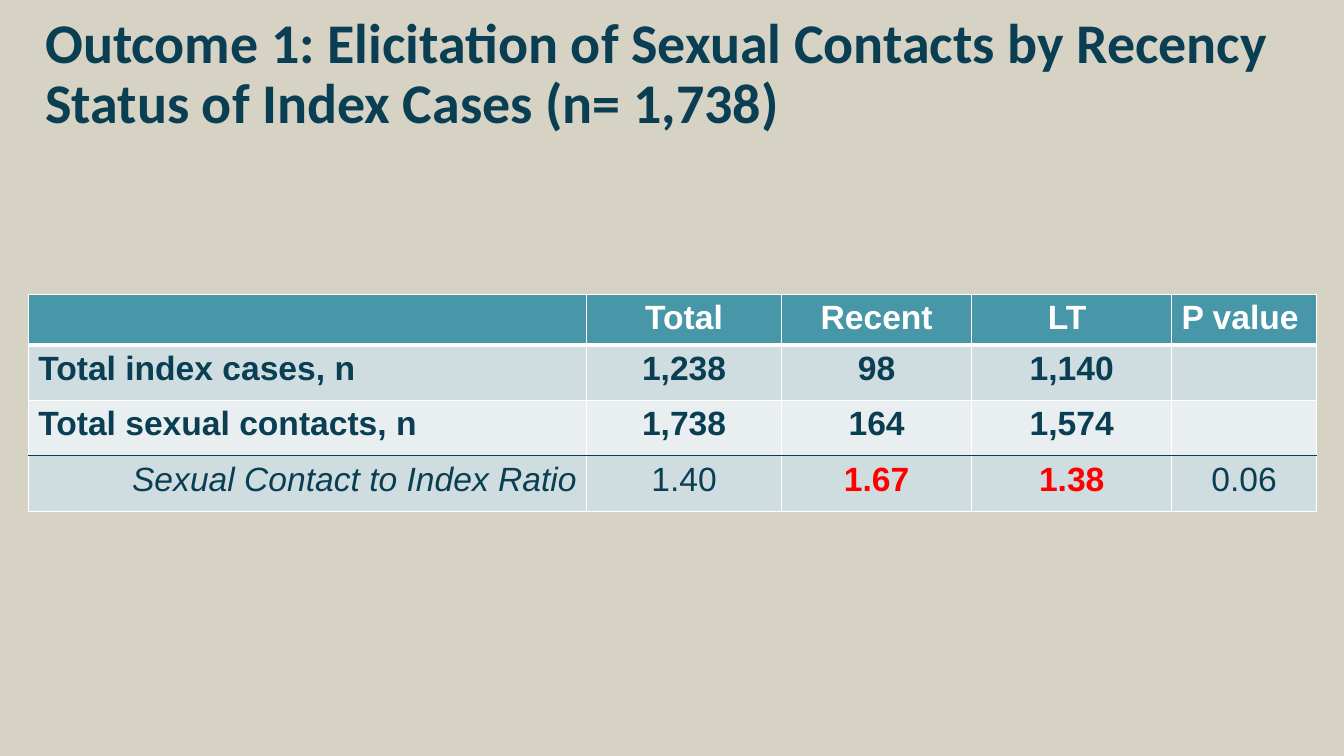
import dataclasses
import lxml.etree
import pptx
import pptx.dml.color
import pptx.enum.text
import pptx.oxml.ns
import pptx.util

Inches = pptx.util.Inches
Align = pptx.enum.text.PP_ALIGN


@dataclasses.dataclass(frozen=True)
class Theme:
    """Colours, fonts and type sizes of the slide."""
    back: str = "D6D2C4"
    ink: str = "0A3E53"
    white: str = "FFFFFF"
    red: str = "FF0000"
    teal: str = "4797A8"
    band: str = "CFDDE1"
    pale: str = "E9EFF1"
    head: dict = dataclasses.field(default_factory=lambda: {
        "name": "Calibri", "size": pptx.util.Pt(40), "bold": True})
    body: dict = dataclasses.field(default_factory=lambda: {
        "name": "Arial", "size": pptx.util.Pt(24), "bold": True})


THEME = Theme()
WIDTHS = [5.54, 1.93, 1.89, 1.98, 1.44]
HEIGHTS = [0.39, 0.55, 0.55, 0.55]
FILLS = [THEME.teal, THEME.band, THEME.pale, THEME.band]
EDGES = [(THEME.white, 1), (THEME.white, 3), (THEME.white, 1),
         (THEME.ink, 1), (THEME.white, 1)]
ROWS = [
    ["", "Total", "Recent", "LT ", "P value"],
    ["Total index cases, n", "1,238", "98", "1,140", ""],
    ["Total sexual contacts, n", "1,738", "164", "1,574", ""],
    ["Sexual Contact to Index Ratio", "1.40", "1.67", "1.38", "0.06"],
]
LAST = len(ROWS) - 1
ALIGNS = {(0, 4): Align.LEFT, (1, 0): Align.LEFT,
          (2, 0): Align.LEFT, (LAST, 0): Align.RIGHT}
LOOKS = {(LAST, 0): {"bold": False, "italic": True},
         (LAST, 1): {"bold": False}, (LAST, 4): {"bold": False}}
REDS = {(LAST, 2), (LAST, 3)}


def rgb(code):
    """Turn a hex code into a colour."""
    return pptx.dml.color.RGBColor.from_string(code)


def style(font, look, color):
    """Apply a dict of format values and a colour to a font."""
    for key, value in look.items():
        setattr(font, key, value)
    font.color.rgb = rgb(color)


def edge(cell, row):
    """Draw the four borders of a cell in the given row."""
    sides = {"L": (THEME.white, 1), "R": (THEME.white, 1),
             "T": EDGES[row], "B": EDGES[row + 1]}
    props = cell._tc.get_or_add_tcPr()
    qn = pptx.oxml.ns.qn
    for spot, (side, (color, width)) in enumerate(sides.items()):
        line = lxml.etree.Element(qn(f"a:ln{side}"), w=str(pptx.util.Pt(width)))
        fill = lxml.etree.SubElement(line, qn("a:solidFill"))
        lxml.etree.SubElement(fill, qn("a:srgbClr"), val=color)
        props.insert(spot, line)


def title(slide, box, text):
    """Place the slide title in its box."""
    frame = slide.shapes.add_textbox(*map(Inches, box)).text_frame
    frame.word_wrap = True
    frame.vertical_anchor = pptx.enum.text.MSO_ANCHOR.MIDDLE
    para = frame.paragraphs[0]
    para.line_spacing = 0.9
    run = para.add_run()
    run.text = text
    style(run.font, THEME.head, THEME.ink)


def grid(slide, box):
    """Place the table of contacts by recency in its box."""
    table = slide.shapes.add_table(
        len(ROWS), len(WIDTHS), *map(Inches, box)).table
    for column, width in zip(table.columns, WIDTHS):
        column.width = Inches(width)
    for row, texts in enumerate(ROWS):
        table.rows[row].height = Inches(HEIGHTS[row])
        for col, text in enumerate(texts):
            spot = row, col
            cell = table.cell(row, col)
            cell.fill.solid()
            cell.fill.fore_color.rgb = rgb(FILLS[row])
            edge(cell, row)
            if not text:
                continue
            para = cell.text_frame.paragraphs[0]
            para.alignment = ALIGNS.get(spot, Align.CENTER)
            run = para.add_run()
            run.text = text
            plain = THEME.ink if row else THEME.white
            style(run.font, THEME.body | LOOKS.get(spot, {}),
                  THEME.red if spot in REDS else plain)


def main():
    """Build and save the slide."""
    deck = pptx.Presentation()
    deck.slide_width, deck.slide_height = Inches(13.33), Inches(7.5)
    slide = deck.slides.add_slide(deck.slide_layouts[6])
    slide.background.fill.solid()
    slide.background.fill.fore_color.rgb = rgb(THEME.back)
    title(slide, (0.35, 0.32, 12.91, 0.85),
          "Outcome 1: Elicitation of Sexual Contacts by Recency "
          "Status of Index Cases (n= 1,738)")
    grid(slide, (0.28, 2.92, sum(WIDTHS), sum(HEIGHTS)))
    deck.save("out.pptx")


if __name__ == "__main__":
    main()
